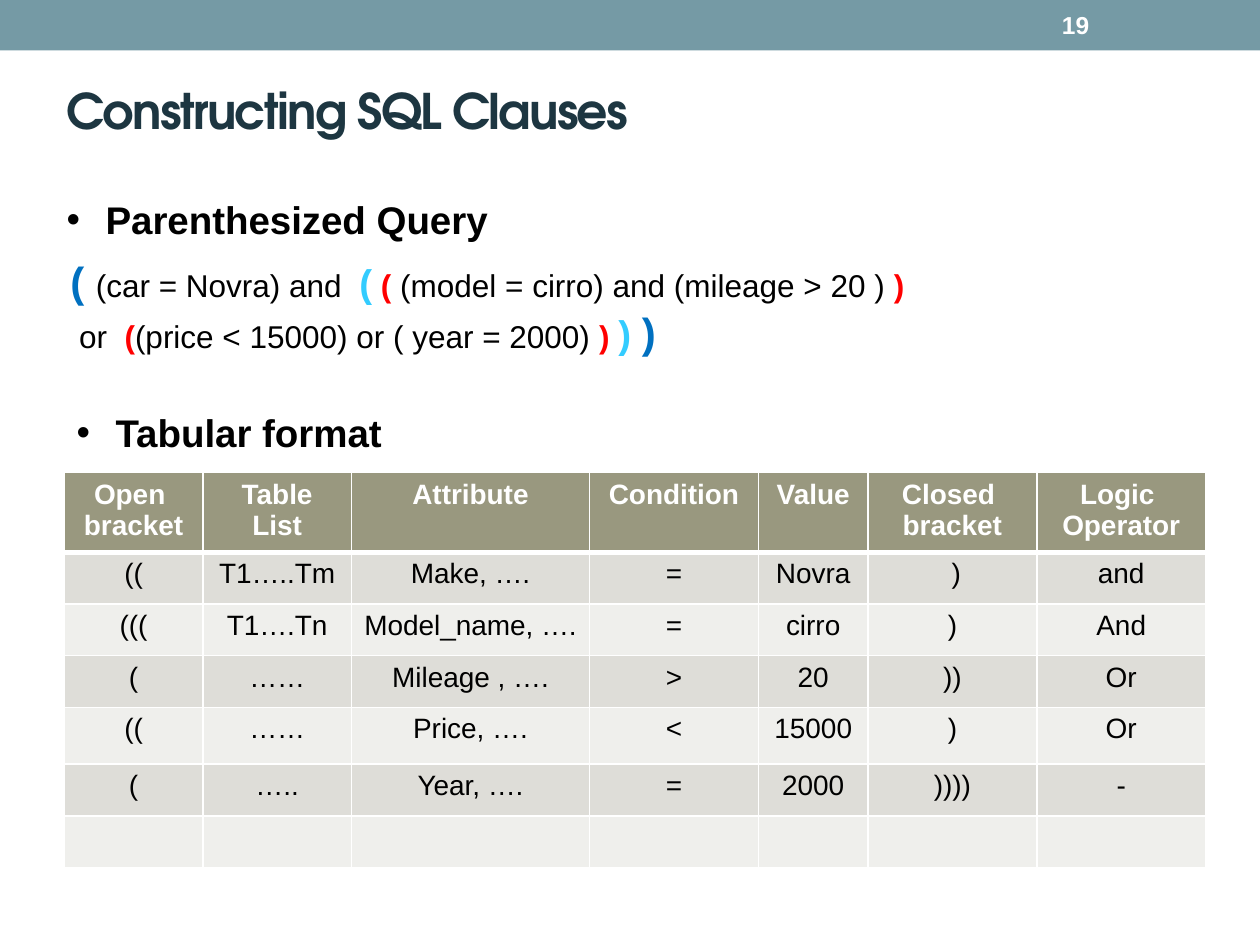
import pptx
import pptx.dml.color
import pptx.enum.shapes
import pptx.enum.text
import pptx.util
from lxml import etree
import pptx.oxml.ns

RGB = pptx.dml.color.RGBColor
Pt = pptx.util.Pt
Inches = pptx.util.Inches
qn = pptx.oxml.ns.qn

BAND = RGB(0x75, 0x9A, 0xA5)
TITLE = RGB(0x1D, 0x36, 0x41)
WHITE = RGB(0xFF, 0xFF, 0xFF)
BLACK = RGB(0, 0, 0)
OUTER = RGB(0x00, 0x70, 0xC0)
MIDDLE = RGB(0x33, 0xCC, 0xFF)
INNER = RGB(0xFF, 0, 0)
HEADER = RGB(0x99, 0x98, 0x7F)
STRIPES = (RGB(0xDE, 0xDD, 0xD8), RGB(0xEF, 0xEF, 0xEC))

# The page is a grid of 100 columns by 100 rows
WIDTH, HEIGHT = Inches(10), Inches(7.5)
COLUMN, ROW = WIDTH // 100, HEIGHT // 100

# Text styles: size, colour, bold
OUTER_MARK = (24, OUTER, True)
MIDDLE_MARK = (22, MIDDLE, True)
INNER_MARK = (18, INNER, True)
PLAIN = (18, BLACK, False)
HEADING = (22, BLACK, True)

QUERY = [
    [("( ", OUTER_MARK), ("(car = Novra) and  ", PLAIN), ("(", MIDDLE_MARK),
     (" ", PLAIN), ("( ", INNER_MARK),
     ("(model = cirro) and (mileage > 20 ) ", PLAIN), (")", INNER_MARK)],
    [(" or  ", PLAIN), ("(", INNER_MARK),
     ("(price < 15000) or ( year = 2000) ", PLAIN), (") ", INNER_MARK),
     (") ", MIDDLE_MARK), (")", OUTER_MARK)],
]

CLAUSES = [
    ["Open \nbracket", "Table\nList", "Attribute", "Condition", "Value",
     "Closed \nbracket", "Logic \nOperator"],
    ["((", "T1…..Tm", "Make, ….", "=", "Novra", " )", "and"],
    ["(((", "T1….Tn", "Model_name, ….", "=", "cirro", ")", "And"],
    ["(", "……", "Mileage , ….", ">", "20", "))", "Or"],
    ["((", "……", "Price, ….", "<", "15000", ")", "Or"],
    ["(", "…..", "Year, ….", "=", "2000", "))))", "-"],
    [""] * 7,
]
CLAUSE_COLUMNS = [11, 11.8, 18.9, 13.4, 8.7, 13.4, 13.4]
CLAUSE_ROWS = [5.47, 5.47, 5.47, 5.47, 6, 5.47, 5.47]


def area(left, top, width, height):
    return (int(left * COLUMN), int(top * ROW),
            int(width * COLUMN), int(height * ROW))


def apply_format(target, values):
    for name, value in values.items():
        setattr(target, name, value)


def add_run(paragraph, words, style, face="Arial"):
    size, colour, bold = style
    run = paragraph.add_run()
    run.text = words
    apply_format(run.font, {"size": Pt(size), "bold": bold, "name": face})
    run.font.color.rgb = colour
    return run


def add_text(slide, place, lines, face="Arial", middle=False):
    """Add a text box; each line is a list of (words, style) pairs."""
    box = slide.shapes.add_textbox(*area(*place))
    anchor = pptx.enum.text.MSO_ANCHOR
    apply_format(box.text_frame, {
        "word_wrap": True,
        "vertical_anchor": anchor.MIDDLE if middle else anchor.TOP,
    })
    for number, line in enumerate(lines):
        frame = box.text_frame
        paragraph = frame.add_paragraph() if number else frame.paragraphs[0]
        for words, style in line:
            add_run(paragraph, words, style, face)
    return box


def add_bullet_heading(slide, left, top, words):
    heading = add_text(slide, (left, top, 87.4, 6.27), [[(words, HEADING)]])
    properties = heading.text_frame.paragraphs[0]._p.get_or_add_pPr()
    indent = Inches(0.31)
    properties.set("marL", str(indent))
    properties.set("indent", str(-indent))
    etree.SubElement(properties, qn("a:buFont"), typeface="Arial")
    etree.SubElement(properties, qn("a:buChar"), char="•")


def add_borders(cell, widths):
    properties = cell._tc.get_or_add_tcPr()
    for side, width in widths.items():
        line = etree.SubElement(properties, qn("a:ln" + side),
                                w=str(Pt(width)))
        fill = etree.SubElement(line, qn("a:solidFill"))
        etree.SubElement(fill, qn("a:srgbClr"), val=str(WHITE))


def fill_cell(cell, words, row):
    is_header = row == 0
    add_borders(cell, {"L": 1, "R": 1, "T": 3 if row == 1 else 1,
                       "B": 3 if is_header else 1})
    cell.fill.solid()
    cell.fill.fore_color.rgb = HEADER if is_header else STRIPES[(row - 1) % 2]
    style = (16, WHITE if is_header else BLACK, is_header)
    for number, line in enumerate(words.split("\n")):
        frame = cell.text_frame
        paragraph = frame.add_paragraph() if number else frame.paragraphs[0]
        paragraph.alignment = pptx.enum.text.PP_ALIGN.CENTER
        if line:
            add_run(paragraph, line, style)


def add_clause_table(slide, left, top):
    place = area(left, top, sum(CLAUSE_COLUMNS), sum(CLAUSE_ROWS))
    table = slide.shapes.add_table(len(CLAUSES), len(CLAUSES[0]), *place).table
    for column, share in zip(table.columns, CLAUSE_COLUMNS):
        column.width = int(share * COLUMN)
    for number, (row, share) in enumerate(zip(table.rows, CLAUSE_ROWS)):
        row.height = int(share * ROW)
        for cell, words in zip(row.cells, CLAUSES[number]):
            fill_cell(cell, words, number)


def add_band(slide):
    band = slide.shapes.add_shape(pptx.enum.shapes.MSO_SHAPE.RECTANGLE,
                                  *area(0, 0, 100, 5.33))
    band.shadow.inherit = False
    band.fill.solid()
    band.fill.fore_color.rgb = BAND
    band.line.fill.background()


def main():
    deck = pptx.Presentation()
    apply_format(deck, {"slide_width": WIDTH, "slide_height": HEIGHT})
    slide = deck.slides.add_slide(deck.slide_layouts[6])

    # Top band with the page number
    add_band(slide)
    add_text(slide, (83.3, 0.27, 11.7, 4.8), [[("19", (14, WHITE, True))]],
             middle=True)

    # Title, with tightened letters
    title = add_text(slide, (4.3, 6.93, 90, 9.47),
                     [[("Constructing SQL Clauses", (28, TITLE, True))]],
                     face="TeX Gyre Adventor", middle=True)
    letters = title.text_frame.paragraphs[0].runs[0]
    letters._r.get_or_add_rPr().set("spc", "-100")

    # Query written with nested brackets
    add_bullet_heading(slide, 4.3, 20.13, "Parenthesized Query")
    add_text(slide, (4.6, 26.4, 88.7, 12.13), QUERY)

    # The same query as a table
    add_bullet_heading(slide, 5.1, 42.67, "Tabular format")
    add_clause_table(slide, 5.1, 50)

    deck.save("out.pptx")


if __name__ == "__main__":
    main()
